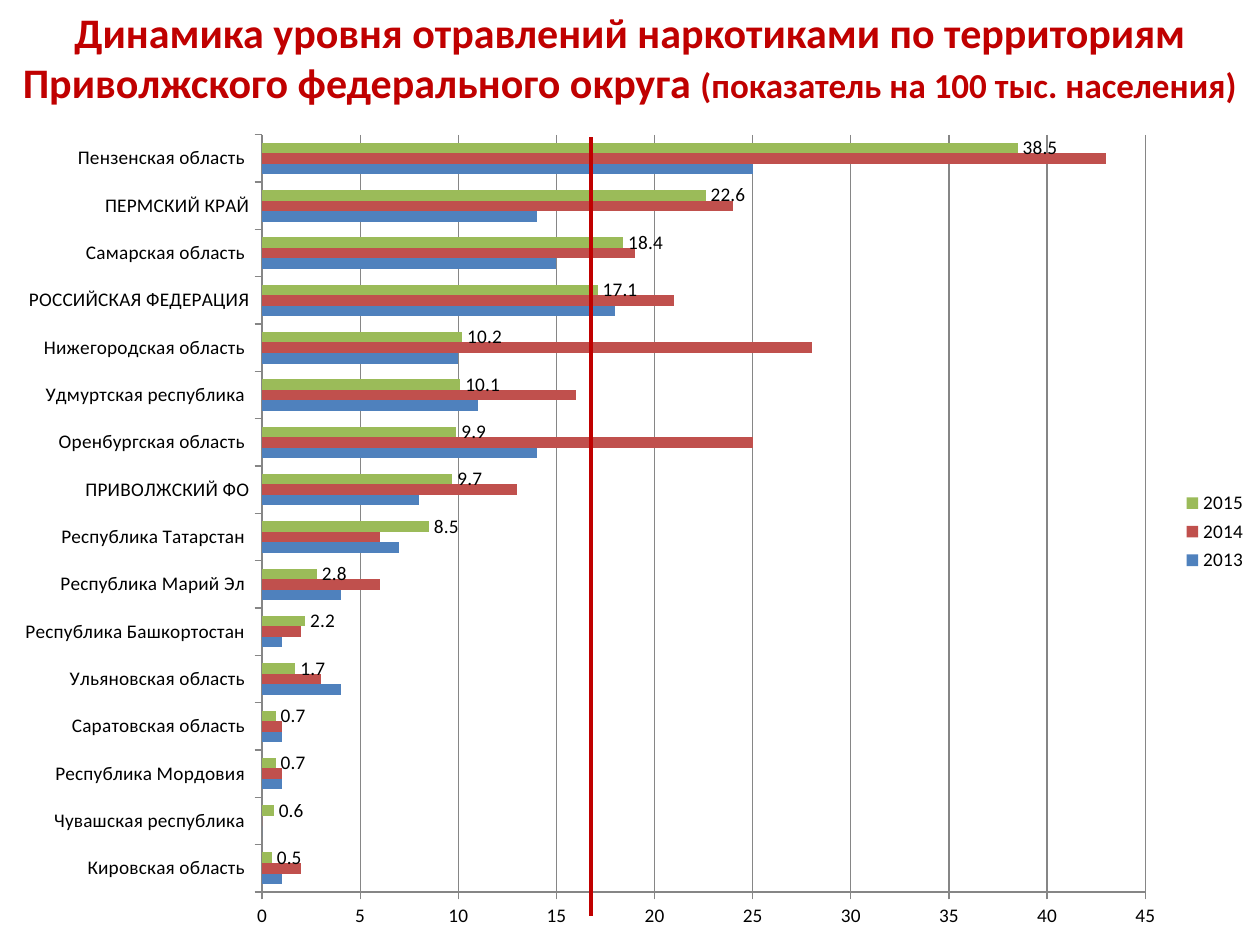
import pptx
import pptx.chart.data
import pptx.dml.color
import pptx.enum.chart
import pptx.enum.shapes
import pptx.enum.text
import pptx.oxml
import pptx.oxml.ns
import pptx.util
from lxml import etree

FONT = "Calibri"
RED, GRID = "C00000", "868686"
TITLE = [
    ("Динамика уровня отравлений наркотиками по территориям Приволжского федерального округа ", 24),
    ("(показатель на 100 тыс. населения)", 20),
]
SERIES = [("2013", "4F81BD"), ("2014", "C0504D"), ("2015", "9BBB59")]
REGIONS = [
    ("Кировская область ", 1, 2, 0.5),
    ("Чувашская республика ", 0, 0, 0.6),
    ("Республика Мордовия ", 1, 1, 0.7),
    ("Саратовская область ", 1, 1, 0.7),
    ("Ульяновская область ", 4, 3, 1.7),
    ("Республика Башкортостан ", 1, 2, 2.2),
    ("Республика Марий Эл ", 4, 6, 2.8),
    ("Республика Татарстан ", 7, 6, 8.5),
    ("ПРИВОЛЖСКИЙ ФО", 8, 13, 9.7),
    ("Оренбургская область ", 14, 25, 9.9),
    ("Удмуртская республика ", 11, 16, 10.1),
    ("Нижегородская область ", 10, 28, 10.2),
    ("РОССИЙСКАЯ ФЕДЕРАЦИЯ", 18, 21, 17.1),
    ("Самарская область ", 15, 19, 18.4),
    ("ПЕРМСКИЙ КРАЙ", 14, 24, 22.6),
    ("Пензенская область ", 25, 43, 38.5),
]
CHART_TOP, CHART_W, CHART_H = 0.94, 10, 6.56
PLOT = {  # shares of the chart frame
    "x": 2.08 / CHART_W, "y": 0.13 / CHART_H,
    "w": 7.01 / CHART_W, "h": 6.01 / CHART_H,
}

inch = pptx.util.Inches
pt = pptx.util.Pt


def rgb(value):
    return pptx.dml.color.RGBColor.from_string(value)


def set_font(font, size, color, bold=False):
    font.name, font.size, font.bold = FONT, pt(size), bold
    font.color.rgb = rgb(color)


def set_line(line, color, width):
    line.color.rgb = rgb(color)
    line.width = pt(width)


def add_title(slide):
    sp = slide.shapes.title
    sp.left, sp.top, sp.width, sp.height = 0, 0, inch(10), inch(0.91)
    tf = sp.text_frame
    tf.word_wrap = True
    tf.auto_size = pptx.enum.text.MSO_AUTO_SIZE.NONE
    tf.vertical_anchor = pptx.enum.text.MSO_ANCHOR.TOP
    p = tf.paragraphs[0]
    p.alignment = pptx.enum.text.PP_ALIGN.CENTER
    for text, size in TITLE:
        r = p.add_run()
        r.text = text
        set_font(r.font, size, RED, bold=True)


def place_plot(chart):
    """Fix the inner plot area at the shares in PLOT."""
    area = chart._chartSpace.chart.plotArea
    for old in area.findall(pptx.oxml.ns.qn("c:layout")):
        area.remove(old)
    layout = etree.Element(pptx.oxml.ns.qn("c:layout"))
    manual = etree.SubElement(layout, pptx.oxml.ns.qn("c:manualLayout"))
    settings = [("layoutTarget", "inner"), ("xMode", "edge"), ("yMode", "edge"), *PLOT.items()]
    for name, value in settings:
        etree.SubElement(manual, pptx.oxml.ns.qn("c:" + name)).set("val", str(value))
    area.insert(0, layout)


def add_bars(slide):
    names, *columns = zip(*REGIONS)
    data = pptx.chart.data.CategoryChartData()
    data.categories = names
    for (year, _), values in zip(SERIES, columns):
        data.add_series(year, values)
    chart = slide.shapes.add_chart(
        pptx.enum.chart.XL_CHART_TYPE.BAR_CLUSTERED,
        0, inch(CHART_TOP), inch(CHART_W), inch(CHART_H), data).chart
    set_font(chart.font, 11, "000000")
    chart.has_title = False
    chart.has_legend = True
    chart.legend.position = pptx.enum.chart.XL_LEGEND_POSITION.RIGHT
    chart.legend.include_in_layout = False

    plot = chart.plots[0]
    plot.gap_width, plot.overlap, plot.vary_by_categories = 150, 0, False
    for series, (_, color) in zip(plot.series, SERIES):
        series.format.fill.solid()
        series.format.fill.fore_color.rgb = rgb(color)
    labels = series.data_labels  # only the latest year is labelled
    labels.show_value = True
    labels.position = pptx.enum.chart.XL_LABEL_POSITION.OUTSIDE_END

    values = chart.value_axis
    values.minimum_scale, values.maximum_scale, values.major_unit = 0, 45, 5
    values.has_major_gridlines = True
    chart.category_axis.has_major_gridlines = False
    for axis in (values, chart.category_axis):
        axis.major_tick_mark = pptx.enum.chart.XL_TICK_MARK.OUTSIDE
        set_line(axis.format.line, GRID, 0.75)
    set_line(values.major_gridlines.format.line, GRID, 0.75)
    place_plot(chart)


def add_threshold(slide):
    line = slide.shapes.add_connector(
        pptx.enum.shapes.MSO_CONNECTOR.STRAIGHT,
        inch(4.69), inch(7.27), inch(4.69), inch(1.09))
    set_line(line.line, RED, 2.25)
    etree.SubElement(line._element.spPr, pptx.oxml.ns.qn("a:effectLst"))


def main():
    prs = pptx.Presentation()
    prs.slide_width, prs.slide_height = inch(10), inch(7.5)
    s = prs.slides.add_slide(prs.slide_layouts[5])
    add_title(s)
    add_bars(s)
    add_threshold(s)
    prs.save("out.pptx")


if __name__ == "__main__":
    main()
